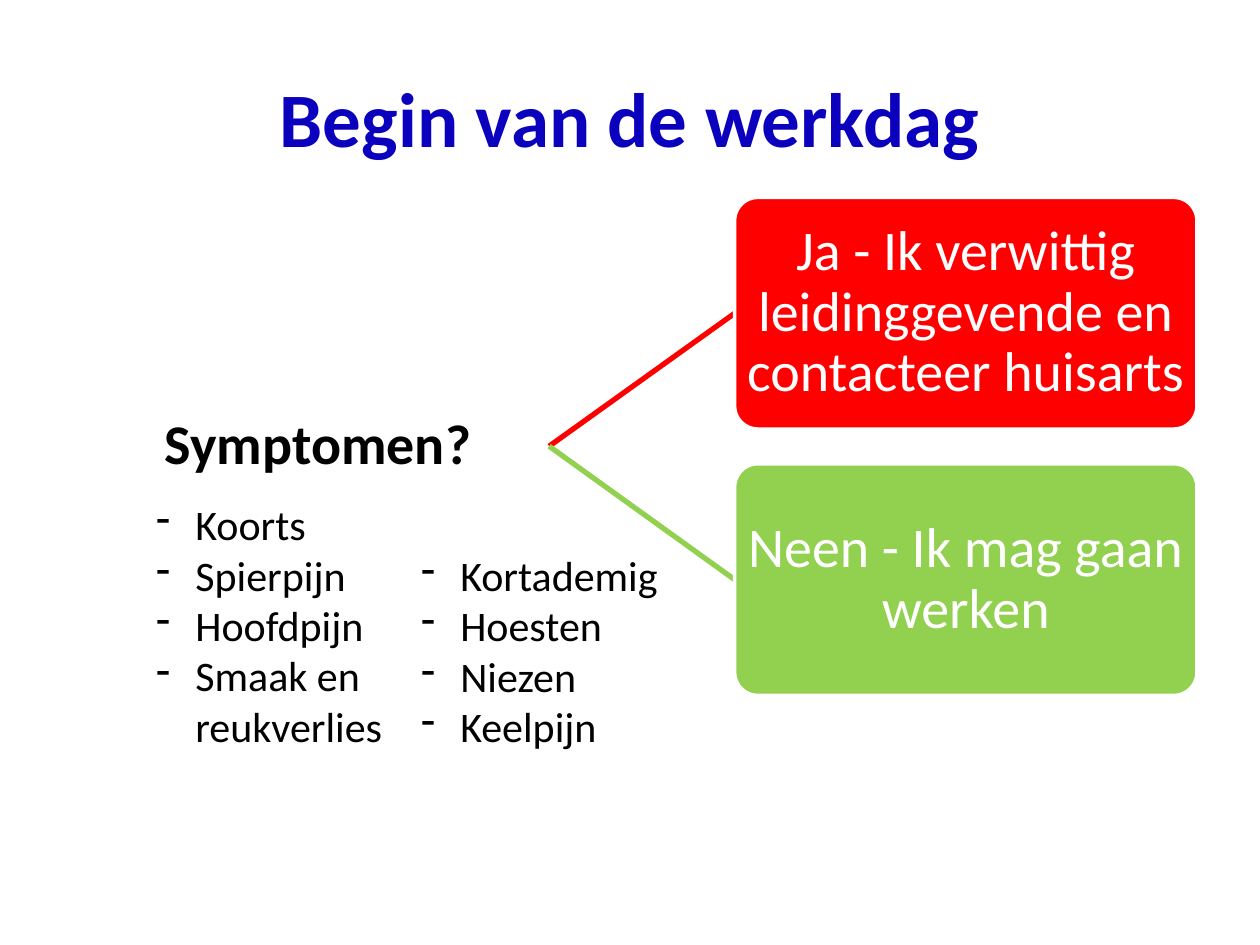
from dataclasses import dataclass

from lxml.etree import SubElement
from pptx import Presentation
from pptx.dml.color import RGBColor
from pptx.enum.shapes import MSO_CONNECTOR, MSO_SHAPE
from pptx.enum.text import MSO_ANCHOR, PP_ALIGN
from pptx.oxml.ns import qn
from pptx.util import Cm, Pt

COLORS = {
    "title": "0A00BE",
    "text": "000000",
    "white": "FFFFFF",
    "yes": "FF0000",
    "no": "92D050",
}
FONT = "Calibri"
BOX_WIDTH, BOX_HEIGHT = 9.32, 4.67
QUESTION_LEFT, QUESTION_TOP = 1.75, 6.66
ANSWER_LEFT = 14.81
BULLET_INDENT = 0.79


@dataclass
class Answer:
    text: str
    top: float
    color: str


@dataclass
class SymptomColumn:
    left: float
    top: float
    height: float
    symptoms: list[str]


ANSWERS = [
    Answer("Ja - Ik verwittig leidinggevende en contacteer huisarts", 3.98, "yes"),
    Answer("Neen - Ik mag gaan werken", 9.35, "no"),
]
SYMPTOM_COLUMNS = [
    SymptomColumn(2.9, 9.93, 5.38, ["Koorts", "Spierpijn", "Hoofdpijn", "Smaak en reukverlies"]),
    SymptomColumn(8.24, 10.95, 4.36, ["Kortademig", "Hoesten", "Niezen", "Keelpijn"]),
]


def rgb(name: str) -> RGBColor:
    return RGBColor.from_string(COLORS[name])


def write_paragraph(paragraph, text: str, *, size: float, color: str = "text",
                    bold: bool = False, align=PP_ALIGN.LEFT, spacing: float = 1.0,
                    bullet: str = "") -> None:
    paragraph.text = text
    paragraph.alignment = align
    paragraph.line_spacing = spacing
    if bullet:
        properties = paragraph._p.get_or_add_pPr()
        properties.set("marL", str(Cm(BULLET_INDENT)))
        properties.set("indent", str(-Cm(BULLET_INDENT)))
        SubElement(properties, qn("a:buFontTx"))
        SubElement(properties, qn("a:buChar"), char=bullet)
    font = paragraph.font
    font.name, font.size, font.bold = FONT, Pt(size), bold
    font.color.rgb = rgb(color)


def add_box(slide, text: str, left: float, top: float, fill: str,
            color: str, bold: bool = False) -> None:
    shape = slide.shapes.add_shape(MSO_SHAPE.ROUNDED_RECTANGLE, Cm(left), Cm(top),
                                   Cm(BOX_WIDTH), Cm(BOX_HEIGHT))
    shape.adjustments[0] = 0.1
    shape.shadow.inherit = False
    shape.fill.solid()
    shape.fill.fore_color.rgb = rgb(fill)
    shape.line.color.rgb = rgb("white")
    shape.line.width = Pt(2)
    frame = shape.text_frame
    frame.word_wrap = True
    frame.vertical_anchor = MSO_ANCHOR.MIDDLE
    frame.margin_left = frame.margin_right = Cm(0.05)
    frame.margin_top = frame.margin_bottom = Cm(0.05)
    write_paragraph(frame.paragraphs[0], text, size=32, color=color, bold=bold,
                    align=PP_ALIGN.CENTER, spacing=0.9)


def add_branch(slide, answer: Answer) -> None:
    """Draw the line from the question to the left edge of an answer."""
    connector = slide.shapes.add_connector(
        MSO_CONNECTOR.STRAIGHT,
        Cm(QUESTION_LEFT + BOX_WIDTH), Cm(QUESTION_TOP + BOX_HEIGHT / 2),
        Cm(ANSWER_LEFT), Cm(answer.top + BOX_HEIGHT / 2))
    connector.line.color.rgb = rgb(answer.color)
    connector.line.width = Pt(3)
    SubElement(connector._element.spPr, qn("a:effectLst"))


def add_symptoms(slide, column: SymptomColumn) -> None:
    text_box = slide.shapes.add_textbox(Cm(column.left), Cm(column.top),
                                        Cm(5.84), Cm(column.height))
    frame = text_box.text_frame
    frame.word_wrap = True
    for index, symptom in enumerate(column.symptoms):
        paragraph = frame.add_paragraph() if index else frame.paragraphs[0]
        write_paragraph(paragraph, symptom, size=24, bullet="-")


def main() -> None:
    presentation = Presentation()
    presentation.slide_width, presentation.slide_height = Cm(25.4), Cm(19.05)
    slide = presentation.slides.add_slide(presentation.slide_layouts[5])

    title = slide.shapes.title
    title.left, title.top, title.width, title.height = Cm(1.27), Cm(0.76), Cm(22.86), Cm(3.18)
    title.text_frame.vertical_anchor = MSO_ANCHOR.MIDDLE
    write_paragraph(title.text_frame.paragraphs[0], "Begin van de werkdag", size=44,
                    color="title", bold=True, align=PP_ALIGN.CENTER)

    add_box(slide, "Symptomen?", QUESTION_LEFT, QUESTION_TOP, "white", "text", bold=True)
    for answer in ANSWERS:
        add_branch(slide, answer)
        add_box(slide, answer.text, ANSWER_LEFT, answer.top, answer.color, "white")
    for column in SYMPTOM_COLUMNS:
        add_symptoms(slide, column)

    presentation.save("out.pptx")


if __name__ == "__main__":
    main()
